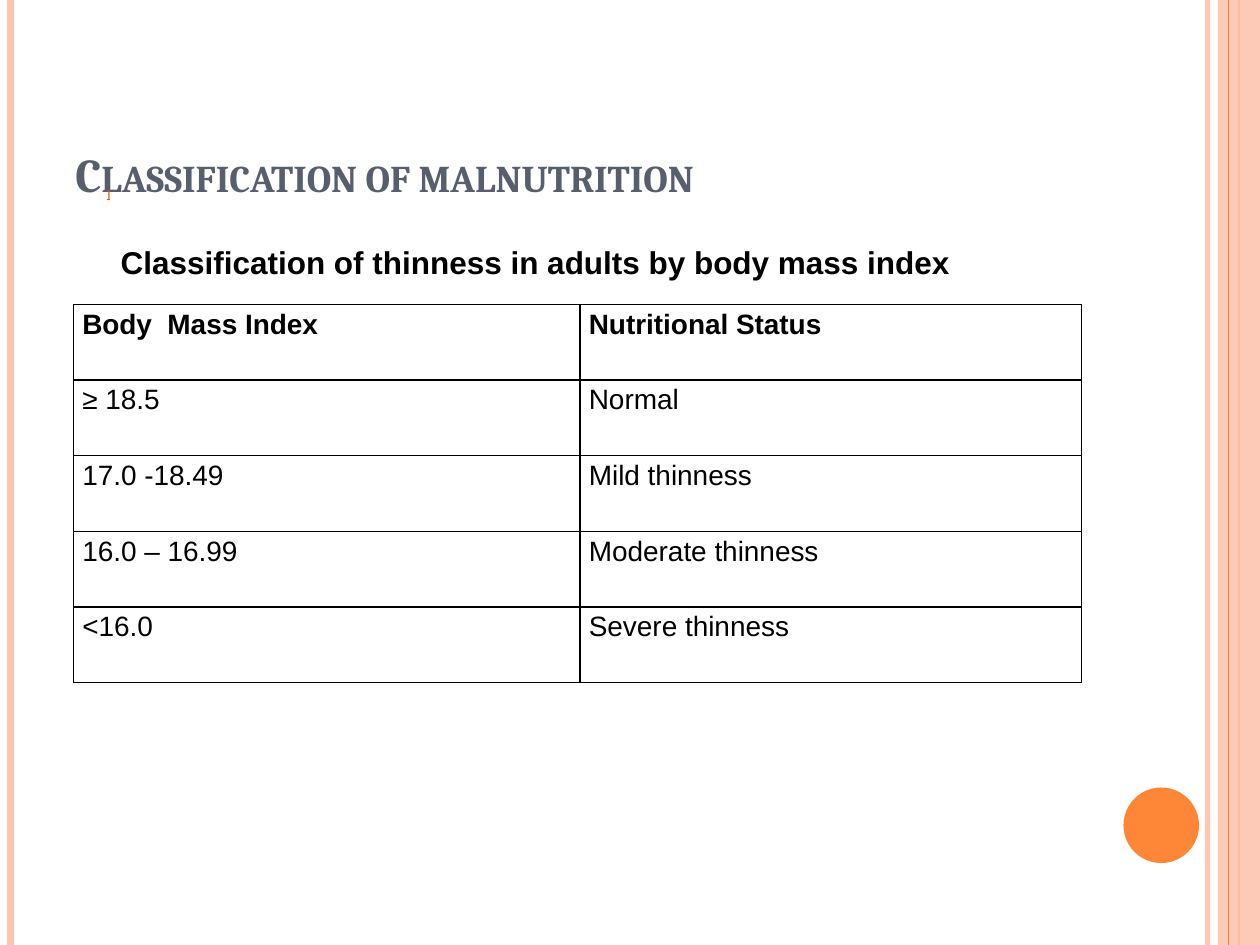
from lxml import etree
from pptx import Presentation, util as u
from pptx.dml.color import RGBColor
from pptx.enum import shapes, text
from pptx.oxml.ns import qn

PINK = RGBColor(0xFE, 0xC3, 0xAE)
ORANGE = RGBColor(0xFE, 0x86, 0x37)
RUST = RGBColor(0xD2, 0x61, 0x1C)
SLATE = RGBColor(0x57, 0x5F, 0x6D)
BLACK = RGBColor(0, 0, 0)

COLS, ROWS = 120, 90
ROWTEXT = [
    ("Body  Mass Index", "Nutritional Status"),
    ("≥ 18.5", "Normal"),
    ("17.0 -18.49", "Mild thinness"),
    ("16.0 – 16.99", "Moderate thinness"),
    ("<16.0", "Severe thinness"),
]


def fade(fill, share):
    """Set the opacity, in percent, of a solid fill inside an XML element."""
    tone = fill.find(".//" + qn("a:srgbClr"))
    etree.SubElement(tone, qn("a:alpha")).set("val", str(share * 1000))


class Board:
    """A slide measured on a grid of 120 columns by 90 rows."""

    def __init__(self, deck):
        self.slide = deck.slides.add_slide(deck.slide_layouts[6])
        self.unit_x = deck.slide_width / COLS
        self.unit_y = deck.slide_height / ROWS
        self.font = "Arial"

    def x(self, cols):
        return round(cols * self.unit_x)

    def y(self, rows):
        return round(rows * self.unit_y)

    def box(self, left, top, wide, high):
        return self.x(left), self.y(top), self.x(wide), self.y(high)

    def stripe(self, col, width, color=PINK, alpha=100):
        line = self.slide.shapes.add_connector(
            shapes.MSO_CONNECTOR.STRAIGHT, self.x(col), 0, self.x(col), self.y(ROWS))
        line.line.width = u.Pt(width)
        line.line.color.rgb = color
        props = line._element.spPr
        if alpha < 100:
            fade(props, alpha)
        etree.SubElement(props, qn("a:effectLst"))

    def block(self, kind, area, color, alpha=100):
        shape = self.slide.shapes.add_shape(kind, *self.box(*area))
        shape.shadow.inherit = False
        shape.fill.solid()
        shape.fill.fore_color.rgb = color
        shape.line.fill.background()
        if alpha < 100:
            fade(shape._element.spPr, alpha)

    def frame(self, area, anchor):
        frame = self.slide.shapes.add_textbox(*self.box(*area)).text_frame
        frame.word_wrap = True
        frame.vertical_anchor = anchor
        return frame

    def run(self, para, words, size, color=BLACK, bold=True, font=None):
        run = para.add_run()
        run.text = words
        run.font.size = u.Pt(size)
        run.font.name = font or self.font
        run.font.bold = bold
        run.font.color.rgb = color
        return run

    def border(self, cell):
        props = cell._tc.get_or_add_tcPr()
        for i, side in enumerate(("lnL", "lnR", "lnT", "lnB")):
            edge = etree.Element(qn("a:" + side), w=str(u.Pt(1)))
            fill = etree.SubElement(edge, qn("a:solidFill"))
            etree.SubElement(fill, qn("a:srgbClr"), val=str(BLACK))
            props.insert(i, edge)

    def table(self, area, widths, data):
        grid = self.slide.shapes.add_table(
            len(data), len(widths), *self.box(*area)).table
        grid.first_row = grid.horz_banding = False
        for col, wide in zip(grid.columns, widths):
            col.width = self.x(wide)
        for r, row in enumerate(data):
            for c, words in enumerate(row):
                cell = grid.cell(r, c)
                cell.fill.background()
                cell.margin_left = cell.margin_right = u.Inches(0.07)
                cell.margin_top = cell.margin_bottom = 0
                self.border(cell)
                para = cell.text_frame.paragraphs[0]
                para.alignment = text.PP_ALIGN.JUSTIFY
                para.line_spacing = 1.15
                para.space_before = u.Pt(3.1)
                self.run(para, words, 16, bold=r == 0)


def main():
    deck = Presentation()
    deck.slide_width, deck.slide_height = u.Inches(10), u.Inches(7.5)
    board = Board(deck)

    board.stripe(115, 3, alpha=93)
    board.stripe(1, 4.5)
    board.stripe(118, 1.5, ORANGE)
    board.block(shapes.MSO_SHAPE.RECTANGLE, (116, 0, 4, ROWS), PINK, 87)
    board.stripe(117, 0.75, ORANGE)
    board.block(shapes.MSO_SHAPE.OVAL, (107, 75, 7.2, 7.2), ORANGE)

    title = board.frame((6, 3.6, 98, 15.6), text.MSO_ANCHOR.BOTTOM)
    title.margin_bottom = 0
    head = board.run(title.paragraphs[0], "Classification of malnutrition",
                     27, SLATE, font="Cambria")
    head.font._element.set("cap", "small")

    board.table((7, 29, 96, 36), (48.25, 47.75), ROWTEXT)

    label = board.frame((9, 17, 84, 10.5), text.MSO_ANCHOR.MIDDLE)
    mark = board.run(label.paragraphs[0], "]", 10, RUST)
    mark.font.underline = True
    mark.font._element.set("baseline", "30000")
    para = label.add_paragraph()
    para.alignment = text.PP_ALIGN.CENTER
    para.space_before = u.Pt(20.7)
    board.run(para, "Classification of thinness in adults by body mass index", 18)

    deck.save("out.pptx")


if __name__ == "__main__":
    main()
